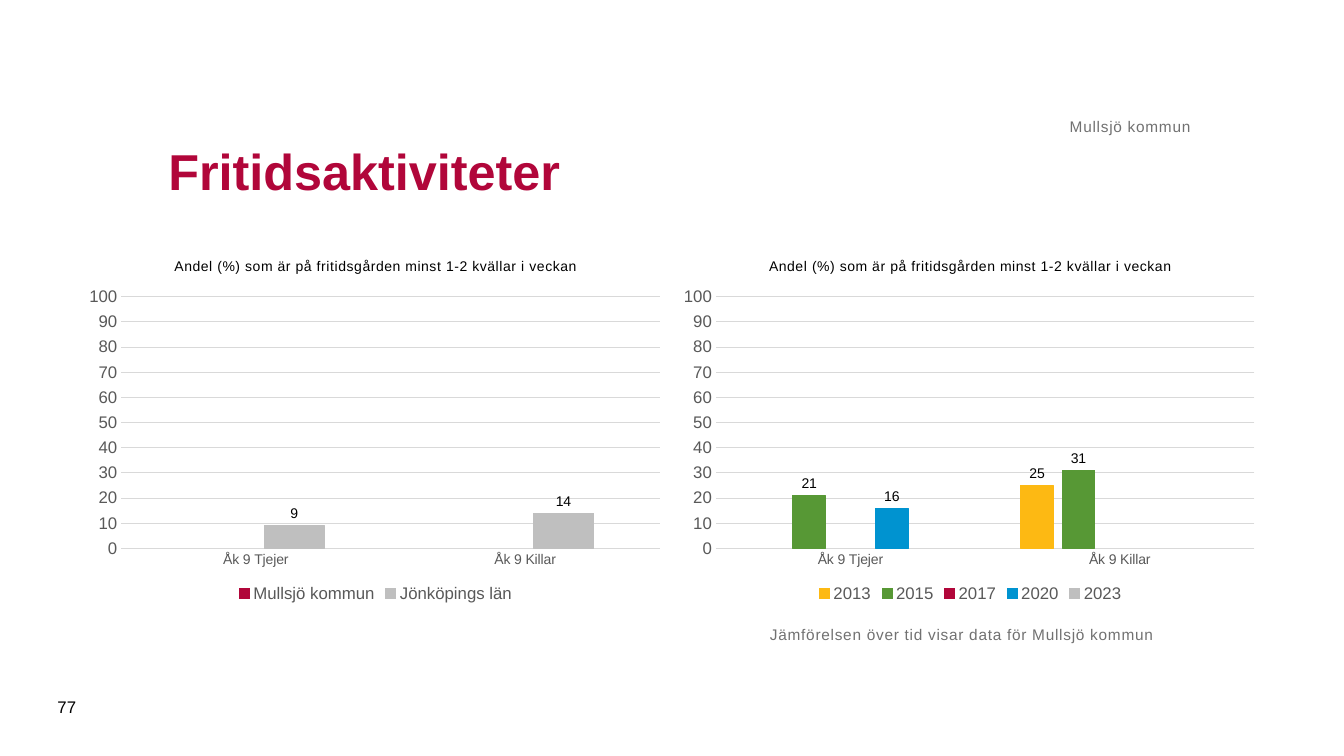
from lxml.etree import SubElement
from pptx import Presentation
from pptx.chart.data import CategoryChartData
from pptx.dml.color import RGBColor
from pptx.enum.chart import XL_CHART_TYPE, XL_LABEL_POSITION, XL_LEGEND_POSITION, XL_TICK_MARK
from pptx.enum.text import MSO_ANCHOR, PP_ALIGN
from pptx.oxml.ns import qn
from pptx.util import Pt

HUES = {
    "red": "B1063A", "silver": "BFBFBF", "gold": "FDB913", "green": "579835",
    "blue": "0093D0", "black": "000000", "gray": "595959", "note": "717171",
    "grid": "D9D9D9",
}
FORM = "#,##0;#,##0"
GROUPS = ["Åk 9 Tjejer", "Åk 9 Killar"]
HEAD = "Andel (%) som är på fritidsgården minst 1-2 kvällar i veckan"
PLACES = [
    ("Mullsjö kommun", "red", (None, None)),
    ("Jönköpings län", "silver", (9, 14)),
]
YEARS = [
    ("2013", "gold", (None, 25)),
    ("2015", "green", (21, 31)),
    ("2017", "red", (None, None)),
    ("2020", "blue", (16, None)),
    ("2023", "silver", (None, None)),
]


def hue(name):
    return RGBColor.from_string(HUES[name])


def style(font, size, color, bold=False):
    font.name = "Arial"
    font.size = Pt(size)
    font.bold = bold
    font.color.rgb = hue(color)


def stroke(line, color):
    line.color.rgb = hue(color)
    line.width = Pt(0.75)


def space(para):
    for run in para.runs:
        run._r.get_or_add_rPr().set("spc", "50")


def place(shape, box):
    shape.left, shape.top, shape.width, shape.height = map(Pt, box)


def add_title(slide, box, text):
    title = slide.shapes.title
    place(title, box)
    frame = title.text_frame
    frame.text = text
    frame.vertical_anchor = MSO_ANCHOR.MIDDLE
    para = frame.paragraphs[0]
    para.alignment = PP_ALIGN.LEFT
    style(para.font, 36, "red", True)


def add_text(slide, box, text, size, color, anchor, align=PP_ALIGN.LEFT):
    frame = slide.shapes.add_textbox(*map(Pt, box)).text_frame
    frame.word_wrap = True
    frame.vertical_anchor = anchor
    frame.text = text
    para = frame.paragraphs[0]
    para.alignment = align
    style(para.font, size, color)
    return frame


def add_note(slide, box, text, anchor, align=PP_ALIGN.LEFT):
    frame = add_text(slide, box, text, 11, "note", anchor, align)
    frame.margin_left = frame.margin_right = 0
    frame.margin_top = frame.margin_bottom = 0
    space(frame.paragraphs[0])


def set_plot(chart, x, y, w, h):
    area = chart._chartSpace.chart.plotArea
    for old in area.findall(qn("c:layout")):
        area.remove(old)
    layout = SubElement(area, qn("c:layout"))
    area.insert(0, layout)
    manual = SubElement(layout, qn("c:manualLayout"))
    parts = [("layoutTarget", "inner"), ("xMode", "edge"), ("yMode", "edge"),
             ("x", x), ("y", y), ("w", w), ("h", h)]
    for tag, val in parts:
        SubElement(manual, qn("c:" + tag)).set("val", str(val))


def set_axes(chart):
    base = chart.category_axis
    base.major_tick_mark = XL_TICK_MARK.NONE
    style(base.tick_labels.font, 10, "gray")
    stroke(base.format.line, "grid")
    scale = chart.value_axis
    scale.minimum_scale, scale.maximum_scale = 0, 100
    scale.major_unit = 10
    scale.major_tick_mark = XL_TICK_MARK.NONE
    scale.format.line.fill.background()
    stroke(scale.major_gridlines.format.line, "grid")
    marks = scale.tick_labels
    marks.number_format = FORM
    marks.number_format_is_linked = False
    style(marks.font, 12, "gray")


def set_bars(plot, rows):
    plot.gap_width = 219
    plot.overlap = -27
    plot.vary_by_categories = False
    for bars, (_, color, _) in zip(plot.series, rows):
        bars.format.fill.solid()
        bars.format.fill.fore_color.rgb = hue(color)
        stroke(bars.format.line, color)
        labels = bars.data_labels
        labels.show_value = True
        labels.position = XL_LABEL_POSITION.OUTSIDE_END
        labels.number_format = FORM
        labels.number_format_is_linked = False
        style(labels.font, 10, "black")


def add_bars(slide, box, rows):
    data = CategoryChartData(number_format=FORM)
    data.categories = GROUPS
    for name, _, vals in rows:
        data.add_series(name, vals)
    chart = slide.shapes.add_chart(
        XL_CHART_TYPE.COLUMN_CLUSTERED, *map(Pt, box), data).chart
    style(chart.font, 10, "black")
    chart.has_title = True
    frame = chart.chart_title.text_frame
    frame.text = HEAD
    style(frame.paragraphs[0].font, 10, "black")
    space(frame.paragraphs[0])
    chart.chart_title.include_in_layout = False
    chart.has_legend = True
    chart.legend.position = XL_LEGEND_POSITION.BOTTOM
    chart.legend.include_in_layout = False
    style(chart.legend.font, 12, "gray")
    set_axes(chart)
    set_bars(chart.plots[0], rows)
    set_plot(chart, 0.07, 0.15, 0.91, 0.69)


def add_pair(slide, box):
    left, top, width, height = box
    gap = 2
    each = (width - gap) / 2
    for spot, rows in enumerate([PLACES, YEARS]):
        add_bars(slide, (left + spot * (each + gap), top, each, height), rows)


def main():
    deck = Presentation()
    deck.slide_width, deck.slide_height = Pt(960), Pt(540)
    slide = deck.slides.add_slide(deck.slide_layouts[5])
    add_pair(slide, (57, 173, 847.5, 260.5))
    add_title(slide, (113, 70.5, 737.5, 102), "Fritidsaktiviteter")
    add_note(slide, (113, 44.5, 737.5, 52.5), "Mullsjö kommun",
             MSO_ANCHOR.BOTTOM, PP_ALIGN.RIGHT)
    add_text(slide, (34, 490.5, 41, 29), "77", 12, "black", MSO_ANCHOR.MIDDLE)
    add_note(slide, (550, 446.5, 382.5, 67.5),
             "Jämförelsen över tid visar data för Mullsjö kommun", MSO_ANCHOR.TOP)
    deck.save("out.pptx")


if __name__ == "__main__":
    main()
